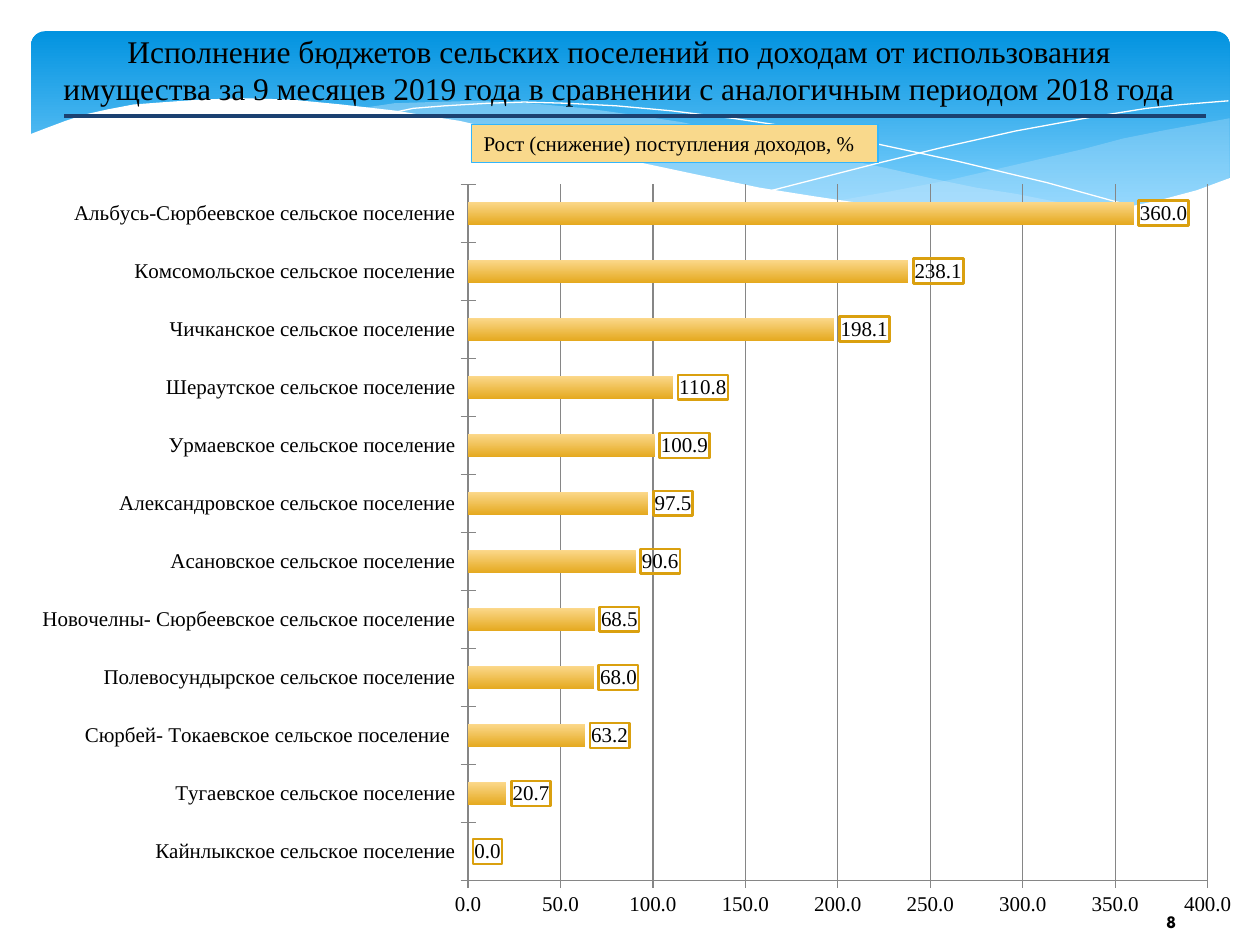
from lxml import etree
from pptx import Presentation
from pptx.chart.data import CategoryChartData
from pptx.dml.color import RGBColor
from pptx.enum.chart import XL_CHART_TYPE, XL_LABEL_POSITION, XL_TICK_MARK
from pptx.enum.shapes import MSO_CONNECTOR, MSO_SHAPE
from pptx.enum.text import MSO_ANCHOR, PP_ALIGN
from pptx.oxml import parse_xml
from pptx.oxml.ns import nsdecls, qn
from pptx.util import Cm, Pt

BAR = XL_CHART_TYPE.BAR_CLUSTERED
OUTSIDE_END = XL_LABEL_POSITION.OUTSIDE_END
CROSS = XL_TICK_MARK.CROSS
STRAIGHT = MSO_CONNECTOR.STRAIGHT
RECT, ROUNDED = MSO_SHAPE.RECTANGLE, MSO_SHAPE.ROUNDED_RECTANGLE
LEFT, CENTER = PP_ALIGN.LEFT, PP_ALIGN.CENTER
TOP, MIDDLE = MSO_ANCHOR.TOP, MSO_ANCHOR.MIDDLE

COLORS = {
    "text": "000000", "white": "FFFFFF", "banner_top": "0293E0", "banner_bottom": "83D3FE",
    "wave": "C6E7FC", "rule": "1B4171", "key": "F9D98C", "key_line": "31B6FD",
    "bar_top": "FCD98C", "bar_bottom": "E5A91F", "label_line": "DAA00F", "axis": "868686",
}
SERIF, SANS = "Times New Roman", "League Spartan"
WAVE_UNIT = Cm(0.0254)  # wave points are in hundredths of an inch

# Wave outlines of the banner
RIGHT_WAVE = [
    (975, 94), (948, 99), (921, 104), (891, 110), (861, 118), (805, 131), (753, 143),
    (706, 152), (661, 160), (691, 164), (732, 168), (769, 171), (803, 172), (835, 172),
    (863, 170), (889, 166), (913, 162), (935, 156), (949, 152), (963, 147), (976, 141), (976, 94)]
LONG_WAVE = [
    (893, 167), (866, 164), (837, 160), (807, 154), (775, 149), (741, 142), (706, 134),
    (668, 126), (629, 116), (584, 106), (541, 97), (501, 91), (465, 86), (420, 82),
    (380, 80), (344, 81), (313, 82), (286, 86), (323, 91), (362, 97), (404, 106),
    (449, 116), (530, 135), (584, 146), (634, 156), (680, 163), (722, 168), (761, 171),
    (796, 173), (828, 173), (857, 171), (893, 167)]
FALLING_LINE = [
    (309, 90), (328, 86), (353, 84), (387, 82), (416, 81), (450, 82), (489, 84), (533, 88),
    (582, 94), (636, 102), (695, 114), (760, 128), (831, 145), (907, 166)]
RISING_LINE = [
    (613, 151), (652, 141), (695, 130), (748, 117), (806, 104), (866, 93), (910, 86),
    (938, 83), (975, 80)]
WHITE_WAVE = [
    (977, 141), (950, 151), (920, 159), (887, 166), (850, 170), (809, 171), (761, 170),
    (708, 165), (647, 156), (603, 149), (555, 139), (503, 128), (447, 114), (418, 107),
    (391, 102), (365, 96), (339, 92), (315, 88), (271, 83), (230, 79), (193, 78), (161, 79),
    (132, 81), (106, 83), (85, 87), (67, 91), (52, 96), (36, 102), (23, 107), (23, 224), (977, 224)]

INCOME_GROWTH = [
    ("Кайнлыкское сельское поселение", 0),
    ("Тугаевское сельское поселение", 20.7),
    ("Сюрбей- Токаевское сельское поселение ", 63.2),
    ("Полевосундырское сельское поселение", 68),
    ("Новочелны- Сюрбеевское сельское поселение", 68.5),
    ("Асановское сельское поселение", 90.6),
    ("Александровское сельское поселение", 97.5),
    ("Урмаевское сельское поселение", 100.9),
    ("Шераутское сельское поселение", 110.8),
    ("Чичканское сельское поселение", 198.1),
    ("Комсомольское сельское поселение", 238.1),
    ("Альбусь-Сюрбеевское сельское поселение", 360),
]


def rgb(name):
    return RGBColor.from_string(COLORS[name])


class SlideBuilder:
    def __init__(self, slide):
        self.slide = slide
        self.shapes = slide.shapes

    def paint(self, fill, color):
        fill.solid()
        fill.fore_color.rgb = rgb(color)

    def gradient(self, fill, top, bottom, end=1.0):
        fill.gradient()
        fill.gradient_angle = 270
        for stop, color, position in zip(fill.gradient_stops, (top, bottom), (0, end)):
            stop.color.rgb = rgb(color)
            stop.position = position

    def stroke(self, line, color, width):
        line.color.rgb = rgb(color)
        line.width = Pt(width)

    def box(self, kind, x, y, w, h):
        shape = self.shapes.add_shape(kind, Cm(x), Cm(y), Cm(w), Cm(h))
        shape.shadow.inherit = False
        shape.line.fill.background()
        return shape

    def wave(self, points, fill=None, alpha=None):
        builder = self.shapes.build_freeform(*points[0], scale=WAVE_UNIT)
        builder.add_line_segments(points[1:], close=fill is not None)
        shape = builder.convert_to_shape()
        shape.shadow.inherit = False
        if fill is None:
            shape.fill.background()
            self.stroke(shape.line, "white", 0)
            return
        self.paint(shape.fill, fill)
        shape.line.fill.background()
        if alpha:
            color = shape.element.spPr.find(qn("a:solidFill"))[0]
            etree.SubElement(color, qn("a:alpha")).set("val", str(alpha * 1000))

    def set_text(self, shape, text, size, font=SERIF, align=CENTER, anchor=MIDDLE, bold=False):
        frame = shape.text_frame
        frame.text = text
        frame.word_wrap = True
        frame.vertical_anchor = anchor
        paragraph = frame.paragraphs[0]
        paragraph.alignment = align
        style = paragraph.runs[0].font
        style.name, style.size, style.bold = font, Pt(size), bold
        style.color.rgb = rgb("text")

    def text(self, x, y, w, h, text, size, **style):
        box = self.shapes.add_textbox(Cm(x), Cm(y), Cm(w), Cm(h))
        self.set_text(box, text, size, **style)
        return box

    def rule(self, x1, x2, y):
        line = self.shapes.add_connector(STRAIGHT, Cm(x1), Cm(y), Cm(x2), Cm(y))
        self.stroke(line.line, "rule", 2.25)
        etree.SubElement(line.element.spPr, qn("a:effectLst"))

    def bar_chart(self, x, y, w, h, rows, plot_area):
        data = CategoryChartData(number_format="0.0")
        data.categories = [name for name, _ in rows]
        data.add_series("Series 1", [value for _, value in rows])
        chart = self.shapes.add_chart(BAR, Cm(x), Cm(y), Cm(w), Cm(h), data).chart
        chart.has_legend = chart.has_title = False
        chart.font.name, chart.font.size = SERIF, Pt(12)
        chart.font.color.rgb = rgb("text")

        # Axes
        values = chart.value_axis
        values.minimum_scale, values.maximum_scale, values.major_unit = 0, 400, 50
        values.tick_labels.number_format = "0.0"
        values.tick_labels.number_format_is_linked = False
        values.has_major_gridlines = True
        for axis in (chart.category_axis, values):
            axis.major_tick_mark = CROSS
            self.stroke(axis.format.line, "axis", 0.75)
        self.stroke(values.major_gridlines.format.line, "axis", 0.75)

        # Bars and framed value labels
        plot = chart.plots[0]
        plot.vary_by_categories = False
        plot.gap_width = 150
        series = plot.series[0]
        self.gradient(series.format.fill, "bar_top", "bar_bottom")
        labels = series.data_labels
        labels.show_value = True
        labels.number_format, labels.number_format_is_linked = "0.0", False
        labels.position = OUTSIDE_END
        chart.element.xpath(".//c:ser/c:dLbls/c:numFmt")[0].addnext(parse_xml(
            f'<c:spPr {nsdecls("c", "a")}><a:noFill/><a:ln w="19050"><a:solidFill>'
            f'<a:srgbClr val="{COLORS["label_line"]}"/></a:solidFill></a:ln></c:spPr>'))

        # Inner plot area as shares of the chart
        area = chart.element.xpath(".//c:plotArea")[0]
        for old in area.findall(qn("c:layout")):
            area.remove(old)
        settings = [("layoutTarget", "inner"), ("xMode", "edge"), ("yMode", "edge")]
        settings += zip("xywh", plot_area)
        inner = "".join(f'<c:{tag} val="{value}"/>' for tag, value in settings)
        area.insert(0, parse_xml(f'<c:layout {nsdecls("c")}><c:manualLayout>{inner}'
                                 '</c:manualLayout></c:layout>'))


def main():
    deck = Presentation()
    deck.slide_width, deck.slide_height = Cm(25.4), Cm(19.05)
    page = SlideBuilder(deck.slides.add_slide(deck.slide_layouts[6]))

    # Banner with waves
    banner = page.box(ROUNDED, 0.63, 0.63, 24.16, 3.96)
    banner.adjustments[0] = 0.07
    page.gradient(banner.fill, "banner_top", "banner_bottom", 0.9)
    page.wave(RIGHT_WAVE, "wave", 29)
    page.wave(LONG_WAVE, "wave", 40)
    page.wave(FALLING_LINE)
    page.wave(RISING_LINE)
    page.wave(WHITE_WAVE, "white")

    # Page number, title and rule
    page.text(22.15, 18.06, 2.92, 1.02, "8", 10, font=SANS, bold=True)
    title = page.text(0.89, 0.74, 23.19, 2.01,
                      "Исполнение бюджетов сельских поселений по доходам от использования имущества "
                      "за 9 месяцев 2019 года в сравнении с аналогичным периодом 2018 года", 18)
    title.text_frame.margin_top, title.text_frame.margin_bottom = 0, Cm(0.69)
    page.rule(1.3, 24.31, 2.34)

    # Income growth chart and its key
    page.bar_chart(0, 3.33, 25.1, 15.39, INCOME_GROWTH, (0.376, 0.025, 0.594, 0.912))
    key = page.box(RECT, 9.5, 2.51, 8.2, 0.77)
    page.paint(key.fill, "key")
    page.stroke(key.line, "key_line", 0.75)
    page.set_text(key, "Рост (снижение) поступления доходов, %", 12, align=LEFT, anchor=TOP)

    deck.save("out.pptx")


if __name__ == "__main__":
    main()
